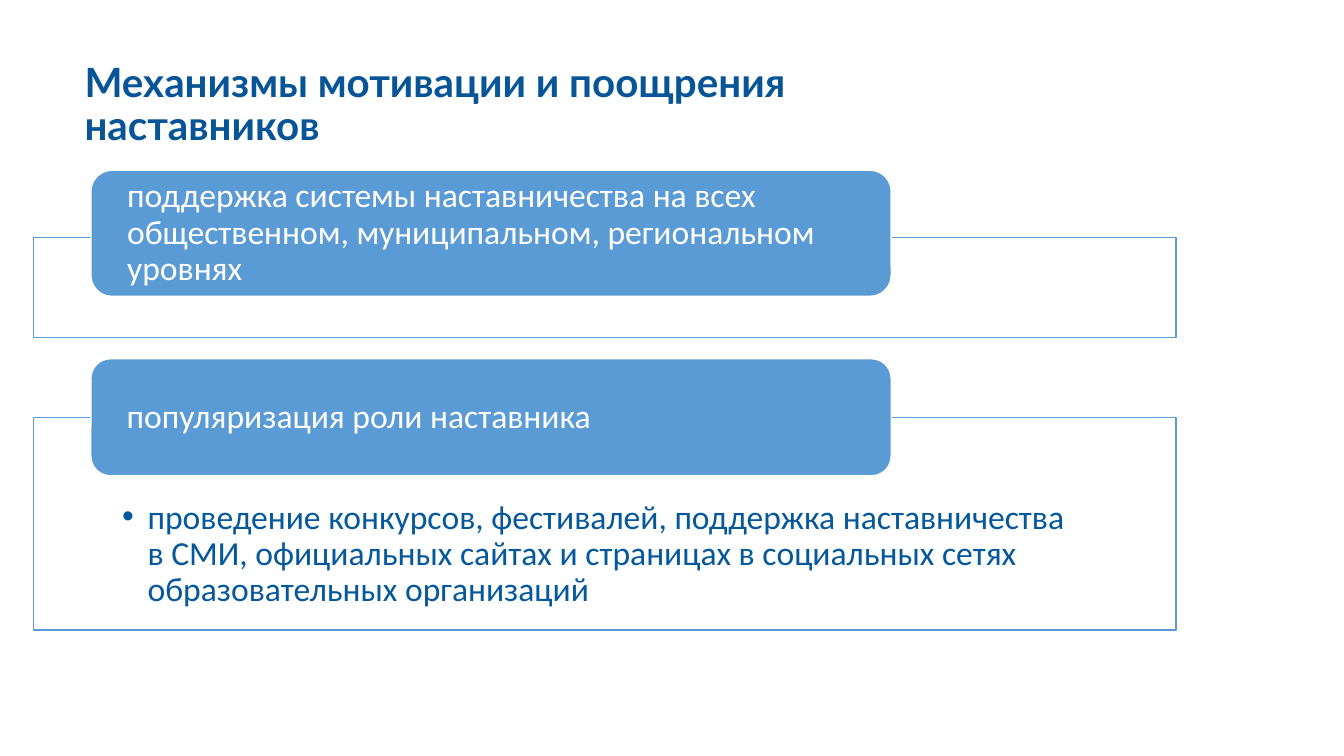
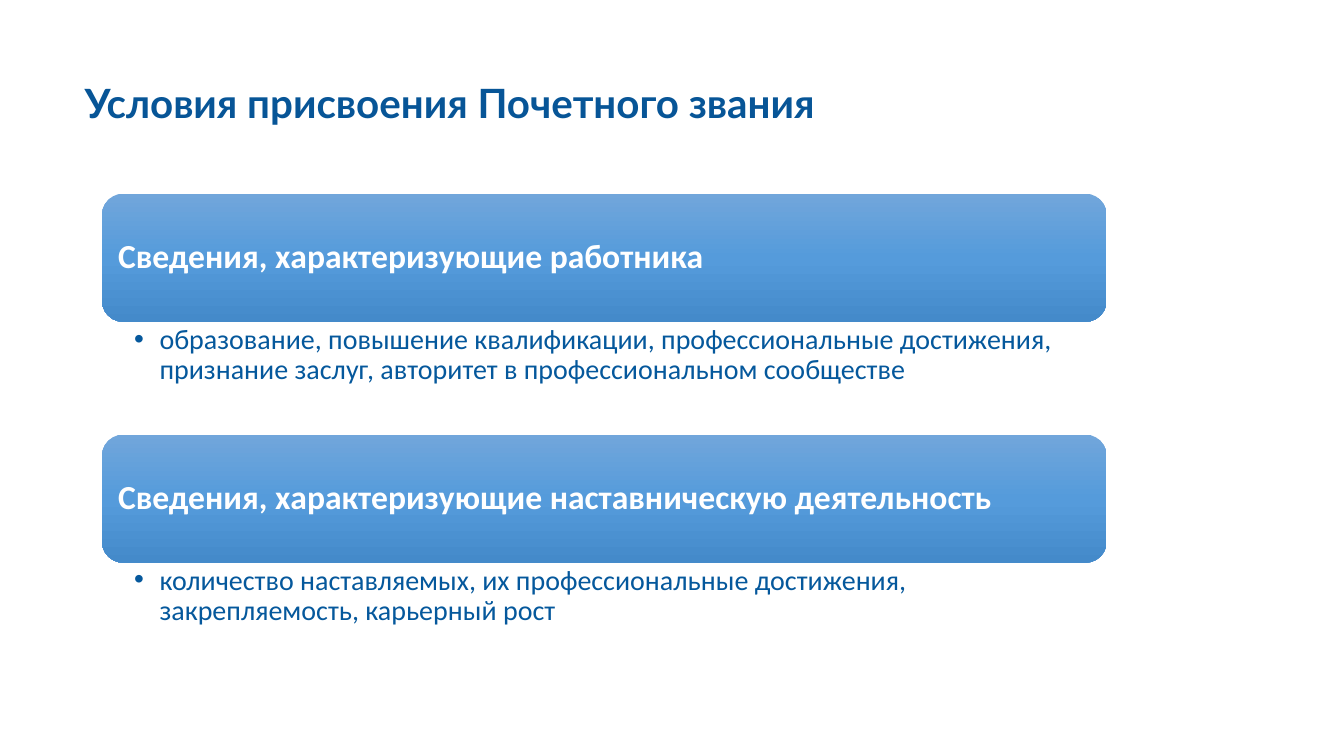
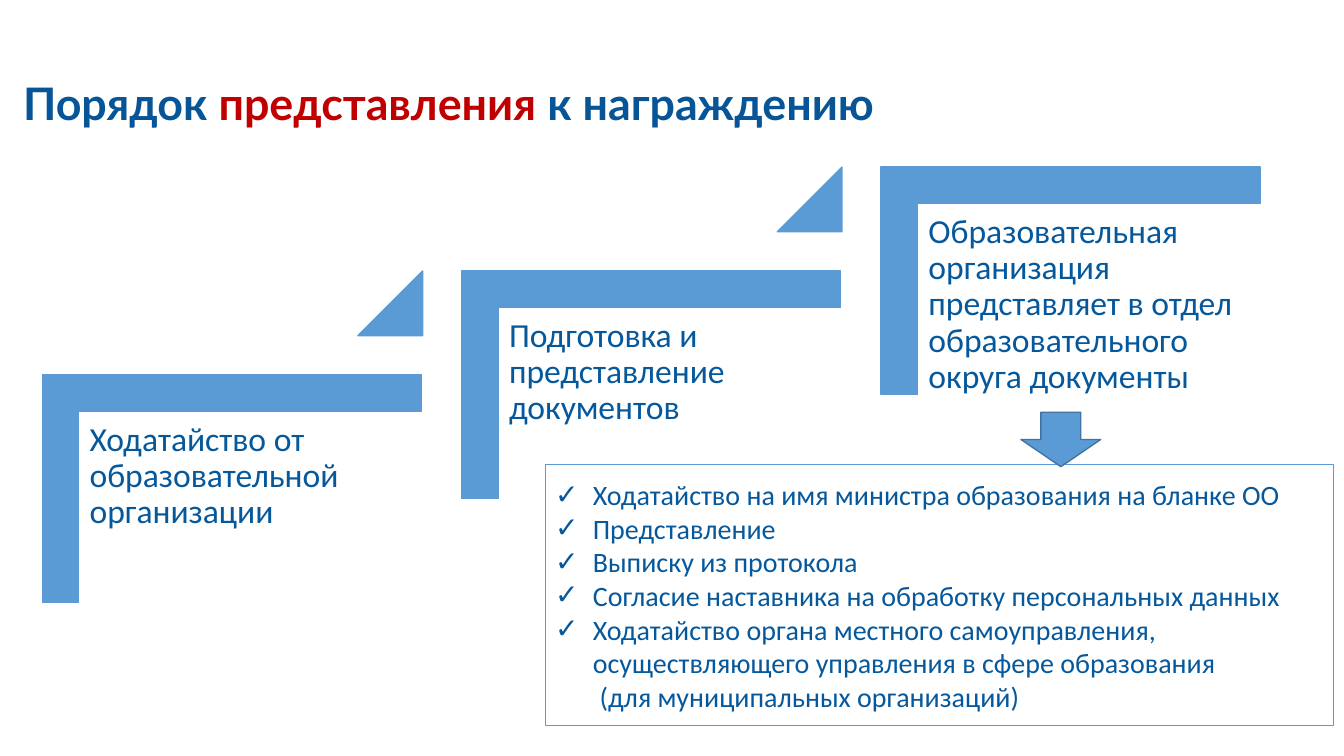
from copy import deepcopy
from typing import Any, NamedTuple, Optional

from lxml.etree import SubElement
from pptx import Presentation
from pptx.dml.color import RGBColor
from pptx.enum.shapes import MSO_SHAPE as Preset
from pptx.enum.text import MSO_ANCHOR as Anchor, MSO_AUTO_SIZE as AutoSize, PP_ALIGN as Align
from pptx.oxml.ns import qn
from pptx.util import Cm, Pt

TITLE_BLUE, TEXT_BLUE, RED = "075597", "05589C", "C00000"
ACCENT, ACCENT_DARK, WHITE = "5B9BD5", "43739E", "FFFFFF"
GRADIENT = [(0, "71A6DB"), (0.5, "559BDB"), (1, "448ACA")]

ONE_LIST, TWO_LISTS = 1, 3
CORNER = Preset.from_xml("corner")


class Box(NamedTuple):
    left: float
    top: float
    width: float
    height: float

    def moved(self, right: float, down: float) -> "Box":
        return self._replace(left=self.left + right, top=self.top + down)


class Insets(NamedTuple):
    left: float = 0.25
    top: float = 0.13
    right: float = 0.25
    bottom: float = 0.13


class Style(NamedTuple):
    size: float
    color: str
    font: str = "Calibri"
    bold: bool = False
    line_spacing: float = 0.9


class Line(NamedTuple):
    """One paragraph: (text, colour) runs, with an optional bullet."""
    runs: list[tuple[str, Optional[str]]]
    bullet: str = ""
    margin: float = 0
    hanging: float = 0


class Section(NamedTuple):
    heading: str
    details: str


TITLE_BOX = Box(1.88, 1.47, 21.13, 2.39)
TITLE_STYLE = Style(28.8, TITLE_BLUE, "Lato", True)
BADGE_STYLE = Style(24, WHITE)
HEADING_STYLE = Style(24, WHITE, bold=True)
LARGE_STYLE = Style(24, TEXT_BLUE)
SMALL_STYLE = Style(20, TEXT_BLUE)
CHECK_STYLE = Style(20, TEXT_BLUE, line_spacing=1)
BADGE_INSETS = Insets(0.76, 0, 0.76, 0)
EVEN_INSETS = Insets(0.25, 0.25, 0.25, 0.25)


def rgb(color: str) -> RGBColor:
    return RGBColor.from_string(color)


def set_values(target: Any, values: dict[str, Any]) -> None:
    for name, value in values.items():
        setattr(target, name, value)


def place(shape: Any, box: Box) -> None:
    set_values(shape, {name: Cm(value) for name, value in box._asdict().items()})


def plain(text: str) -> Line:
    return Line([(text, None)])


def bulleted(text: str, bullet: str = "•", indent: float = 0.64) -> Line:
    return Line([(text, None)], bullet, indent, indent)


def set_bullet(paragraph: Any, line: Line) -> None:
    properties = paragraph._p.get_or_add_pPr()
    properties.set("marL", str(Cm(line.margin)))
    properties.set("indent", str(-Cm(line.hanging)))
    if line.bullet:
        SubElement(properties, qn("a:buChar")).set("char", line.bullet)
    else:
        SubElement(properties, qn("a:buNone"))


def write(shape: Any, lines: list[Line], style: Style, insets: Insets = Insets(),
          anchor: Anchor = Anchor.TOP) -> None:
    frame = shape.text_frame
    set_values(frame, {"word_wrap": True, "auto_size": AutoSize.NONE, "vertical_anchor": anchor})
    set_values(frame, {f"margin_{side}": Cm(value) for side, value in insets._asdict().items()})
    for index, line in enumerate(lines):
        paragraph = frame.add_paragraph() if index else frame.paragraphs[0]
        set_bullet(paragraph, line)
        set_values(paragraph, {"alignment": Align.LEFT, "line_spacing": style.line_spacing,
                               "space_before": Pt(0), "space_after": Pt(0)})
        for text, color in line.runs:
            run = paragraph.add_run()
            run.text = text
            set_values(run.font, {"name": style.font, "size": Pt(style.size), "bold": style.bold})
            run.font.color.rgb = rgb(color or style.color)


def paint(shape: Any, fill: str, outline: str) -> None:
    shape.fill.solid()
    shape.fill.fore_color.rgb = rgb(fill)
    shape.line.color.rgb = rgb(outline)
    shape.line.width = Pt(1)


def paint_gradient(shape: Any) -> None:
    """Fill from top to bottom with the three gradient stops, without outline."""
    shape.fill.gradient()
    stop_list = shape._element.spPr.find(".//" + qn("a:gsLst"))
    stop_list.append(deepcopy(stop_list[-1]))
    for stop, (position, color) in zip(shape.fill.gradient_stops, GRADIENT):
        stop.position = position
        stop.color.rgb = rgb(color)
    shape.fill.gradient_angle = 270
    shape.line.fill.background()


def add_preset(slide: Any, preset: Preset, box: Box, fill: str = ACCENT,
               outline: str = ACCENT, adjustments: tuple[float, ...] = ()) -> Any:
    shape = slide.shapes.add_shape(preset, *map(Cm, box))
    shape.shadow.inherit = False
    paint(shape, fill, outline)
    for index, value in enumerate(adjustments):
        shape.adjustments[index] = value
    return shape


def add_titled_slide(presentation: Any, layout: int, title: Line, box: Box = TITLE_BOX,
                     style: Style = TITLE_STYLE) -> Any:
    slide = presentation.slides.add_slide(presentation.slide_layouts[layout])
    place(slide.shapes.title, box)
    write(slide.shapes.title, [title], style, anchor=Anchor.MIDDLE)
    return slide


def add_badge(slide: Any, top: float, height: float, text: str) -> None:
    badge = add_preset(slide, Preset.ROUNDED_RECTANGLE, Box(2.29, top, 20.17, height),
                       outline=WHITE)
    write(badge, [plain(text)], BADGE_STYLE, BADGE_INSETS, Anchor.MIDDLE)


def build_motivation(presentation: Any) -> None:
    slide = add_titled_slide(presentation, ONE_LIST,
                             plain("Механизмы мотивации и поощрения наставников"))
    events = slide.placeholders[1]
    place(events, Box(0.84, 10.52, 28.8, 5.36))
    paint(events, WHITE, ACCENT)
    write(events, [bulleted("проведение конкурсов, фестивалей, поддержка наставничества в СМИ, "
                            "официальных сайтах и страницах в социальных сетях "
                            "образовательных организаций")],
          LARGE_STYLE, Insets(2.24, 2.08, 2.24, 0.48))
    add_preset(slide, Preset.RECTANGLE, Box(0.84, 5.99, 28.8, 2.51), WHITE)
    add_badge(slide, 4.29, 3.18, "поддержка системы наставничества на всех общественном, "
                                 "муниципальном, региональном уровнях")
    add_badge(slide, 9.04, 2.95, "популяризация роли наставника")


def build_conditions(presentation: Any) -> None:
    sections = [
        Section("Сведения, характеризующие работника",
                "образование, повышение квалификации, профессиональные достижения, "
                "признание заслуг, авторитет в профессиональном сообществе"),
        Section("Сведения, характеризующие наставническую деятельность",
                "количество наставляемых, их профессиональные достижения, "
                "закрепляемость, карьерный рост"),
    ]
    slide = add_titled_slide(presentation, TWO_LISTS, plain("Условия присвоения Почетного звания"))
    heading_box = Box(2.57, 4.88, 25.32, 3.23)
    details_box = Box(2.57, 8.11, 25.32, 2.84)
    pitch = heading_box.height + details_box.height
    for index, section in enumerate(sections):
        heading = add_preset(slide, Preset.ROUNDED_RECTANGLE,
                             heading_box.moved(0, index * pitch))
        paint_gradient(heading)
        write(heading, [plain(section.heading)], HEADING_STYLE, EVEN_INSETS, Anchor.MIDDLE)
        details = slide.placeholders[index + 1]
        place(details, details_box.moved(0, index * pitch))
        write(details, [bulleted(section.details)], SMALL_STYLE, Insets(0.81, 0.08, 0.41, 0.08))


def build_procedure(presentation: Any) -> None:
    steps = [
        "Ходатайство от образовательной организации",
        "Подготовка и представление документов",
        "Образовательная организация представляет в отдел образовательного округа документы",
    ]
    documents = [
        "Ходатайство на имя министра образования на бланке ОО",
        "Представление",
        "Выписку из протокола",
        "Согласие наставника на обработку персональных данных",
        "Ходатайство органа местного самоуправления, "
        "осуществляющего управления в сфере образования",
    ]
    title = Line([("Порядок ", None), ("представления", RED), (" к награждению", None)])
    slide = add_titled_slide(presentation, ONE_LIST, title, Box(0.33, 1.47, 24.05, 2.39),
                             TITLE_STYLE._replace(size=32))
    for index, step in enumerate(steps):
        shift = (index * 10.57, index * -2.62)
        corner = add_preset(slide, CORNER, Box(2.97, 7.54, 5.74, 9.55).moved(*shift),
                            adjustments=(0.16, 0.16))
        corner.rotation = 90
        label_box = Box(2.01, 10.39, 8.64, 7.57).moved(*shift)
        label = slide.shapes.add_textbox(*map(Cm, label_box))
        write(label, [plain(step)], LARGE_STYLE, EVEN_INSETS)
        if index < len(steps) - 1:
            add_preset(slide, Preset.ISOSCELES_TRIANGLE,
                       Box(9.02, 6.83, 1.63, 1.63).moved(*shift), adjustments=(1,))

    checklist = slide.placeholders[1]
    place(checklist, Box(13.74, 11.71, 19.86, 6.58))
    paint(checklist, WHITE, ACCENT)
    note = Line([("(для муниципальных организаций)", None)], margin=1.12)
    write(checklist, [bulleted(text, "✓", 0.95) for text in documents] + [note],
          CHECK_STYLE, anchor=Anchor.MIDDLE)
    add_preset(slide, Preset.DOWN_ARROW, Box(25.73, 10.39, 2.01, 1.37), outline=ACCENT_DARK)


def main() -> None:
    presentation = Presentation()
    set_values(presentation, {"slide_width": Cm(33.87), "slide_height": Cm(19.05)})
    build_motivation(presentation)
    build_conditions(presentation)
    build_procedure(presentation)
    presentation.save("out.pptx")


if __name__ == "__main__":
    main()
